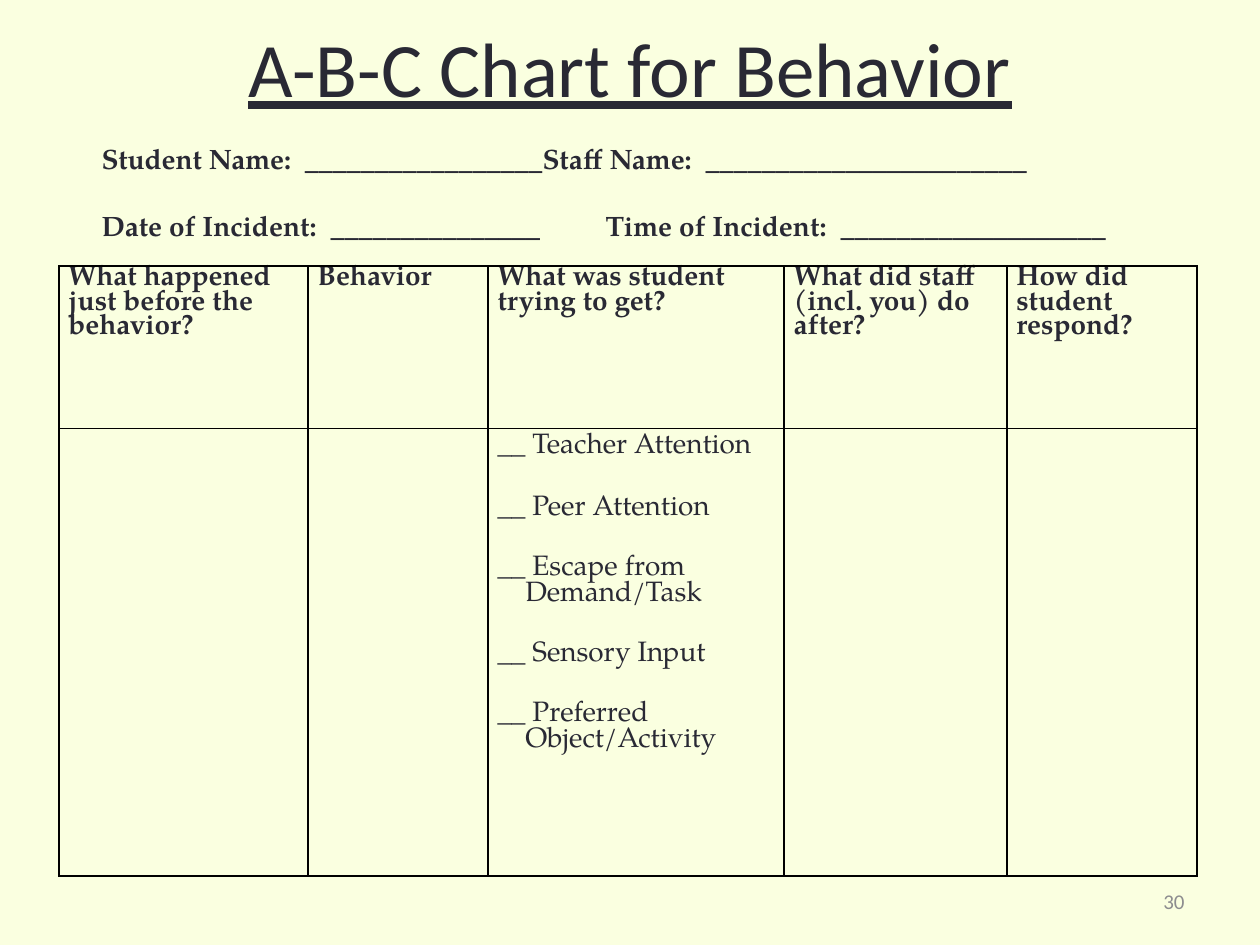
from dataclasses import dataclass

from lxml.etree import SubElement
from pptx import Presentation
from pptx.dml.color import RGBColor
from pptx.enum.text import MSO_ANCHOR, MSO_AUTO_SIZE, PP_ALIGN
from pptx.oxml.ns import qn
from pptx.util import Cm, Pt


@dataclass(frozen=True)
class Theme:
    background: str = "FAFFE0"
    ink: str = "292934"
    muted: str = "8D8D8F"
    border: str = "000000"
    sans: str = "Calibri"
    serif: str = "TeX Gyre Pagella"
    blank_line: str = "Times New Roman"
    title_size: int = 44
    body_size: int = 16
    number_size: int = 12
    border_width: int = 1
    tight: float = 0.9
    form_gap: float = 19
    item_gap: float = 17.5


def set_attributes(target, values):
    for name, value in values.items():
        setattr(target, name, value)


class SlideBuilder:
    def __init__(self, slide, theme):
        self.slide, self.theme = slide, theme
        fill = slide.background.fill
        fill.solid()
        fill.fore_color.rgb = RGBColor.from_string(theme.background)

    def span(self, para, text, color=None, **values):
        theme = self.theme
        span = para.add_run()
        span.text = text
        set_attributes(span.font, {"name": theme.serif, "size": Pt(theme.body_size), **values})
        span.font.color.rgb = RGBColor.from_string(color or theme.ink)

    def text_box(self, left, top, width, height):
        box = self.slide.shapes.add_textbox(Cm(left), Cm(top), Cm(width), Cm(height))
        set_attributes(box.text_frame, {
            "word_wrap": True,
            "auto_size": MSO_AUTO_SIZE.NONE,
            "vertical_anchor": MSO_ANCHOR.MIDDLE,
        })
        return box.text_frame

    def label(self, place, text, align, **values):
        para = self.text_box(*place).paragraphs[0]
        para.alignment = align
        self.span(para, text, name=self.theme.sans, **values)

    def form_lines(self, place, lines, indent, tab_stops):
        """Write fill-in lines whose fields start at the given tab stops."""
        frame = self.text_box(*place)
        for index, line in enumerate(lines):
            para = frame.add_paragraph() if index else frame.paragraphs[0]
            para.space_before = Pt(self.theme.form_gap if index else 0)
            properties = para._p.get_or_add_pPr()
            properties.set("marL", "0")
            properties.set("indent", str(Cm(indent)))
            tabs = SubElement(properties, qn("a:tabLst"))
            for stop in tab_stops:
                SubElement(tabs, qn("a:tab"), pos=str(Cm(stop)), algn="l")
            self.span(para, line, bold=True)

    def table(self, place, columns, rows):
        frame = self.slide.shapes.add_table(len(rows), len(columns), *map(Cm, place))
        table = frame.table
        set_attributes(table, {"first_row": False, "horz_banding": False})
        for column, width in zip(table.columns, columns):
            column.width = Cm(width)
        for row, height in zip(table.rows, rows):
            row.height = Cm(height)
        for cell in table.iter_cells():
            set_attributes(cell, {
                "margin_left": Cm(0.19), "margin_right": Cm(0.19),
                "margin_top": 0, "margin_bottom": 0,
            })
            self.cell_borders(cell)
            cell.fill.background()
        return table

    def cell_borders(self, cell):
        properties = cell._tc.get_or_add_tcPr()
        for side in ("lnL", "lnR", "lnT", "lnB"):
            line = SubElement(properties, qn(f"a:{side}"), w=str(Pt(self.theme.border_width)))
            fill = SubElement(line, qn("a:solidFill"))
            SubElement(fill, qn("a:srgbClr"), val=self.theme.border)

    def heading(self, cell, text):
        para = cell.text_frame.paragraphs[0]
        para.line_spacing = self.theme.tight
        self.span(para, text, bold=True)

    def checklist(self, cell, items, indent):
        """Write items after a blank to tick; further lines of an item are indented."""
        frame = cell.text_frame
        for index, (first, *others) in enumerate(items):
            para = frame.add_paragraph() if index else frame.paragraphs[0]
            set_attributes(para, {
                "line_spacing": self.theme.tight if index else 1.0,
                "space_before": Pt(self.theme.item_gap if index else 0),
            })
            properties = para._p.get_or_add_pPr()
            properties.set("marL", str(Cm(indent)))
            properties.set("indent", str(-Cm(indent)))
            self.span(para, "__ ", name=self.theme.blank_line)
            self.span(para, first)
            for other in others:
                para.add_line_break()
                self.span(para, other)


def main():
    theme = Theme()
    deck = Presentation()
    set_attributes(deck, {"slide_width": Cm(25.4), "slide_height": Cm(19.05)})
    page = SlideBuilder(deck.slides.add_slide(deck.slide_layouts[6]), theme)

    page.label((1.27, 0.74, 22.86, 1.2), "A-B-C Chart for Behavior", PP_ALIGN.CENTER,
               size=Pt(theme.title_size), underline=True)
    page.label((18.21, 17.65, 5.92, 1.02), "30", PP_ALIGN.RIGHT,
               size=Pt(theme.number_size), color=theme.muted)

    headings = {
        "What happened just before the behavior?": 5.02,
        "Behavior": 3.63,
        "What was student trying to get?": 5.97,
        "What did staff (incl. you) do after?": 4.49,
        "How did student respond?": 3.83,
    }
    table = page.table((1.19, 5.36, 22.94, 12.3), list(headings.values()), [3.28, 9.02])
    for column, text in enumerate(headings):
        page.heading(table.cell(0, column), text)
    page.checklist(table.cell(1, 2), [
        ("Teacher Attention",),
        ("Peer Attention",),
        ("Escape from", "Demand/Task"),
        ("Sensory Input",),
        ("Preferred", "Object/Activity"),
    ], indent=0.56)

    page.form_lines((0.53, 2.71, 23.09, 2.31), [
        "Student Name:  _________________\tStaff Name:  _______________________",
        "Date of Incident:  _______________\t\tTime of Incident:  ___________________",
    ], indent=1.27, tab_stops=(10.16, 11.43))

    deck.save("out.pptx")


if __name__ == "__main__":
    main()
